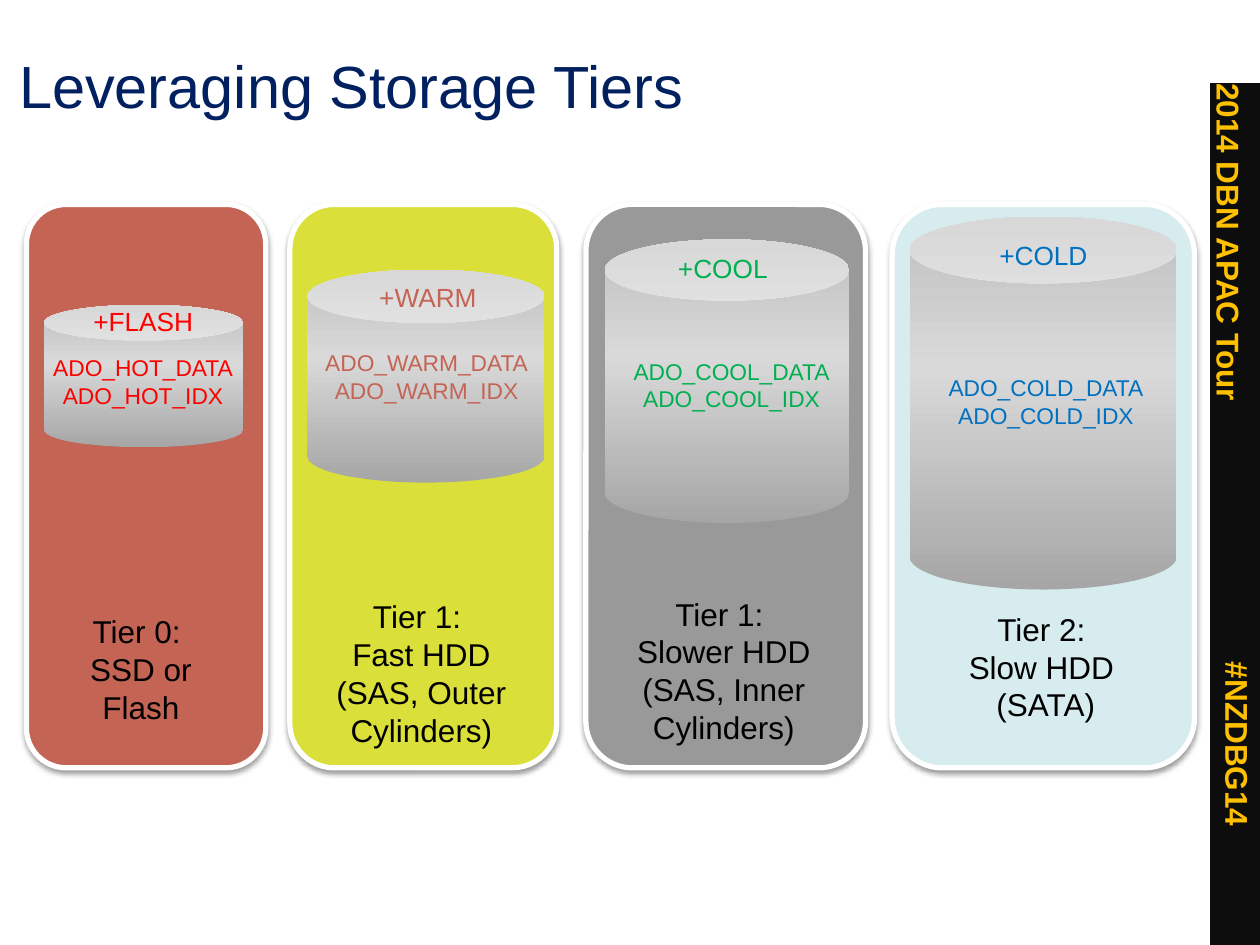
from copy import deepcopy
from typing import NamedTuple

from lxml import etree
from pptx import Presentation
from pptx.dml.color import RGBColor
from pptx.enum.shapes import MSO_SHAPE
from pptx.enum.text import MSO_ANCHOR, PP_ALIGN
from pptx.oxml import parse_xml
from pptx.oxml.ns import nsdecls, qn
from pptx.util import Pt

CARD, CYLINDER, BAR = MSO_SHAPE.ROUNDED_RECTANGLE, MSO_SHAPE.CAN, MSO_SHAPE.RECTANGLE
LEFT, CENTER = PP_ALIGN.LEFT, PP_ALIGN.CENTER
TOP, BOTTOM = MSO_ANCHOR.TOP, MSO_ANCHOR.BOTTOM

FONT = "Arial"
WHITE = RGBColor(0xFF, 0xFF, 0xFF)
BLACK = RGBColor(0x00, 0x00, 0x00)
NAVY = RGBColor(0x00, 0x20, 0x60)
CHARCOAL = RGBColor(0x0D, 0x0D, 0x0D)
GOLD = RGBColor(0xFF, 0xC0, 0x00)
BRICK = RGBColor(0xC4, 0x64, 0x54)
LIME = RGBColor(0xDB, 0xDF, 0x39)
GRAY = RGBColor(0x99, 0x99, 0x99)
ICE = RGBColor(0xD6, 0xEC, 0xEE)
RED = RGBColor(0xFF, 0x00, 0x00)
GREEN = RGBColor(0x00, 0xB0, 0x50)
BLUE = RGBColor(0x00, 0x70, 0xC0)
STEEL_STOPS = (
    (0, RGBColor(0xA6, 0xA6, 0xA6)),
    (59, RGBColor(0xD9, 0xD9, 0xD9)),
    (100, RGBColor(0xBF, 0xBF, 0xBF)),
)

CARD_TOP, CARD_HEIGHT = 116.8, 322
HEADING_WIDTH, HEADING_HEIGHT = 62, 29
NAMES_HEIGHT, LABEL_HEIGHT = 43, 86


class Box(NamedTuple):
    """Left, top, width and height in points."""
    left: float
    top: float
    width: float
    height: float

    def emu(self) -> list[int]:
        return [Pt(length) for length in self]


class Tier(NamedTuple):
    card_fill: RGBColor
    text_color: RGBColor
    card: Box
    cylinder: Box
    heading: str
    heading_box: Box
    names: str
    names_box: Box
    label: str
    label_box: Box


def card_box(left: float, width: float) -> Box:
    return Box(left, CARD_TOP, width, CARD_HEIGHT)


def heading_box(left: float, top: float) -> Box:
    return Box(left, top, HEADING_WIDTH, HEADING_HEIGHT)


TIERS = (
    Tier(BRICK, RED, card_box(15.1, 136.8), Box(25.2, 174.2, 113.8, 81.4),
         "+FLASH", heading_box(53.3, 174.2),
         "ADO_HOT_DATA\nADO_HOT_IDX", Box(25.2, 202.3, 113, NAMES_HEIGHT),
         "Tier 0: \nSSD or Flash", Box(28.1, 349.9, 105, LABEL_HEIGHT)),
    Tier(LIME, BRICK, card_box(165.6, 152.6), Box(175.7, 154.1, 135.4, 121.7),
         "+WARM", heading_box(216.7, 160.6),
         "ADO_WARM_DATA\nADO_WARM_IDX", Box(181.4, 199.4, 124.6, NAMES_HEIGHT),
         "Tier 1: \nFast HDD\n(SAS, Outer Cylinders)",
         Box(174.2, 341.3, 133.2, LABEL_HEIGHT)),
    Tier(GRAY, GREEN, card_box(334.8, 159.8), Box(345.6, 136.8, 139.7, 162),
         "+COOL", heading_box(387.4, 144),
         "ADO_COOL_DATA\nADO_COOL_IDX", Box(342.7, 204.5, 150.5, NAMES_HEIGHT),
         "Tier 1: \nSlower HDD\n(SAS, Inner Cylinders)",
         Box(331.9, 339.8, 163.4, LABEL_HEIGHT)),
    Tier(ICE, BLUE, card_box(509.8, 172.8), Box(519.8, 123.8, 152.6, 213.1),
         "+COLD", heading_box(571, 136.8),
         "ADO_COLD_DATA\nADO_COLD_IDX", Box(533.5, 213.8, 128.2, NAMES_HEIGHT),
         "Tier 2: \nSlow HDD \n(SATA)", Box(529.2, 348.5, 136.8, LABEL_HEIGHT)),
)


def write_text(shape, text: str, *, size: float, color: RGBColor, bold: bool = False,
               align=LEFT, anchor=TOP, wrap: bool = True,
               insets: tuple = (0, 0, 0, 0)) -> None:
    """Fill a shape with one paragraph; newlines become line breaks."""
    frame = shape.text_frame
    frame.word_wrap = wrap
    frame.vertical_anchor = anchor
    (frame.margin_left, frame.margin_top,
     frame.margin_right, frame.margin_bottom) = [Pt(inset) for inset in insets]
    paragraph = frame.paragraphs[0]
    paragraph.text = text.replace("\n", "\v")
    paragraph.alignment = align
    for run in paragraph.runs:
        run.font.name = FONT
        run.font.size = Pt(size)
        run.font.bold = bold
        run.font.color.rgb = color
    run_format = paragraph.runs[0].font._element
    for line_break in paragraph._p.findall(qn("a:br")):
        line_break.append(deepcopy(run_format))


def add_filled(shapes, preset, box: Box, fill: RGBColor):
    shape = shapes.add_shape(preset, *box.emu())
    shape.shadow.inherit = False
    shape.fill.solid()
    shape.fill.fore_color.rgb = fill
    shape.line.fill.background()
    return shape


def add_card(shapes, box: Box, fill: RGBColor) -> None:
    card = add_filled(shapes, CARD, box, fill)
    card.line.color.rgb = WHITE
    card.line.width = Pt(3)
    effects = card._element.spPr.find(qn("a:effectLst"))
    effects.append(parse_xml(
        f'<a:outerShdw {nsdecls("a")} blurRad="{Pt(3.1)}" dist="{Pt(1.6)}" '
        f'dir="5400000" rotWithShape="0"><a:srgbClr val="{BLACK}">'
        '<a:alpha val="38000"/></a:srgbClr></a:outerShdw>'))


def add_cylinder(shapes, box: Box) -> None:
    cylinder = add_filled(shapes, CYLINDER, box, GRAY)
    cylinder.fill.gradient()
    cylinder.fill.gradient_angle = 90
    stops = cylinder._element.spPr.find(qn("a:gradFill")).find(qn("a:gsLst"))
    for stop in list(stops):
        stops.remove(stop)
    for position, color in STEEL_STOPS:
        stop = etree.SubElement(stops, qn("a:gs"), pos=str(position * 1000))
        etree.SubElement(stop, qn("a:srgbClr"), val=str(color))


def add_tier(slide, tier: Tier) -> None:
    shapes = slide.shapes.add_group_shape().shapes
    add_card(shapes, tier.card, tier.card_fill)
    add_cylinder(shapes, tier.cylinder)
    write_text(shapes.add_textbox(*tier.heading_box.emu()), tier.heading,
               size=15, color=tier.text_color)
    write_text(shapes.add_textbox(*tier.names_box.emu()), tier.names,
               size=13, color=tier.text_color, align=CENTER, wrap=False)
    write_text(shapes.add_textbox(*tier.label_box.emu()), tier.label,
               size=18, color=BLACK, align=CENTER)


def add_event_bar(slide) -> None:
    shapes = slide.shapes.add_group_shape().shapes
    bar = add_filled(shapes, BAR, Box(691.6, 47.5, 28.4, 492.5), CHARCOAL)
    write_text(bar, "2014 DBN APAC Tour", size=18, color=GOLD, bold=True,
               anchor=BOTTOM)
    bar.text_frame._txBody.bodyPr.set("vert", "vert")
    hashtag = shapes.add_textbox(*Box(652.3, 411.8, 110.2, 28.8).emu())
    hashtag.rotation = 90
    write_text(hashtag, "#NZDBG14", size=18, color=GOLD, bold=True,
               wrap=False, insets=(7.2, 3.6, 7.2, 3.6))


def main() -> None:
    deck = Presentation()
    deck.slide_width, deck.slide_height = Pt(720), Pt(540)
    slide = deck.slides.add_slide(deck.slide_layouts[5])
    title = slide.shapes.title
    title.left, title.top, title.width, title.height = Box(6, 25.2, 651.6, 52.6).emu()
    write_text(title, "Leveraging Storage Tiers", size=34, color=NAVY,
               insets=(5, 2.9, 5, 2.9))
    add_event_bar(slide)
    for tier in TIERS:
        add_tier(slide, tier)
    deck.save("out.pptx")


if __name__ == "__main__":
    main()
